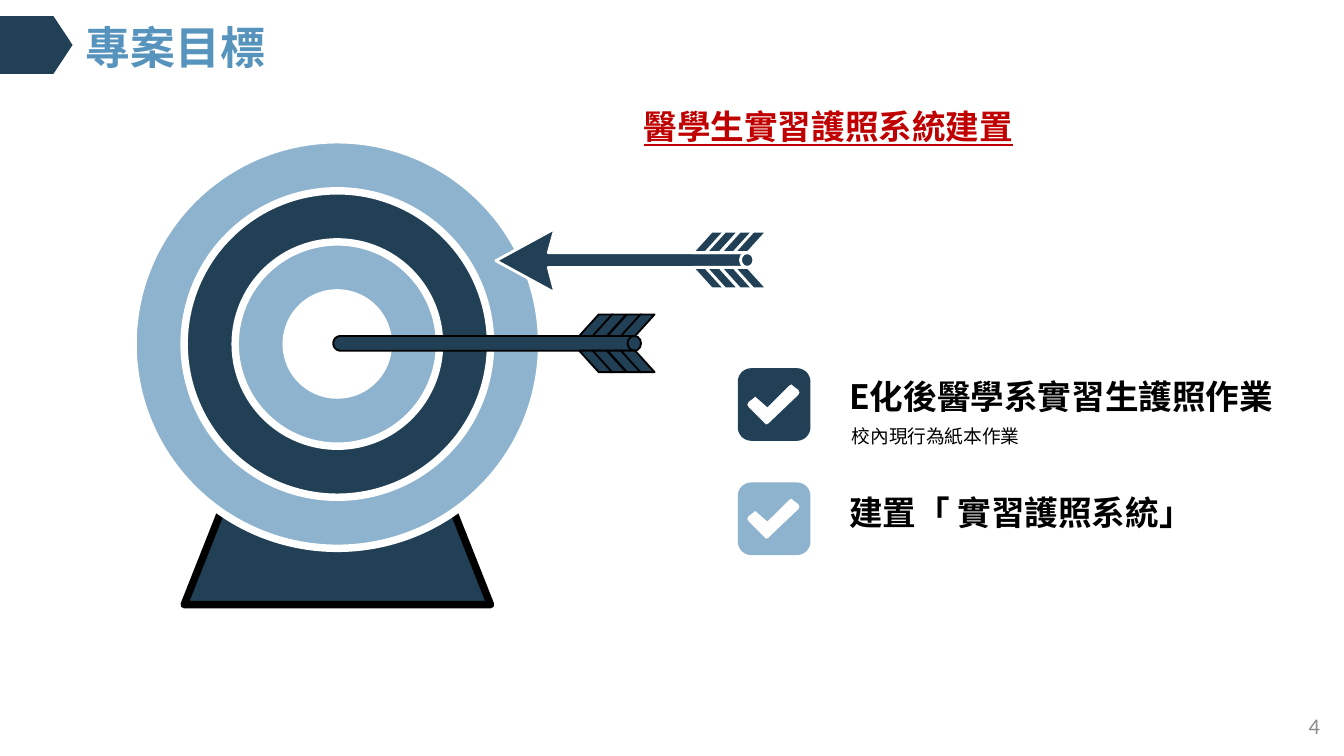
from math import cos, radians, sin

from lxml.etree import SubElement
from pptx import Presentation
from pptx.dml.color import RGBColor
from pptx.enum.shapes import MSO_SHAPE
from pptx.enum.text import MSO_ANCHOR, PP_ALIGN
from pptx.oxml.ns import qn
from pptx.util import Pt

PX = 9144  # EMU in one px, 100 px to the inch
CJK = "Noto Sans CJK SC"
COLORS = {
    "navy": "214055", "sky": "8EB3CE", "title": "5693BD", "red": "C00000",
    "black": "000000", "white": "FFFFFF", "gray": "8C8C8C",
}


def paint(shape, fill, line=None, width=1):
    shape.shadow.inherit = False
    shape.fill.solid()
    shape.fill.fore_color.rgb = RGBColor.from_string(COLORS[fill])
    if line:
        shape.line.color.rgb = RGBColor.from_string(COLORS[line])
        shape.line.width = Pt(width)
    else:
        shape.line.fill.background()
    return shape


def arc(x, y, radius, start):
    """Points of a clockwise quarter circle around (x, y)."""
    angles = [radians(start + step) for step in range(0, 91, 10)]
    return [(x + radius * cos(a), y + radius * sin(a)) for a in angles]


deck = Presentation()
deck.slide_width = 1000 * PX
deck.slide_height = deck.slide_width * 9 // 16
page = deck.slides.add_slide(deck.slide_layouts[6])

# Title marker
marker = page.shapes.add_shape(MSO_SHAPE.PENTAGON, 0, 12 * PX, 54 * PX, 43 * PX)
marker.adjustments[0] = 0.33
paint(marker, "navy")

# Target: stand and rings
target = page.shapes.add_group_shape()
stand = target.shapes.add_shape(
    MSO_SHAPE.TRAPEZOID, 137 * PX, 356 * PX, 228 * PX, 94 * PX)
stand.adjustments[0] = 0.396
paint(stand, "navy", "black", 4)
for index, color in enumerate(["sky", "navy", "sky", "white"]):
    size = 304 - 76 * index
    ring = target.shapes.add_shape(
        MSO_SHAPE.OVAL, (99 + 38 * index) * PX, (104 + 38 * index) * PX,
        size * PX, size * PX)
    paint(ring, color, "white", 4)

# Arrows: outline of the shaft, then nock and feathers
flying = page.shapes.add_group_shape()
stuck_shaft = [(472, 250), (472, 261)] + arc(253.5, 255.5, 5.5, 90) + arc(253.5, 255.5, 5.5, 180)
flying_shaft = [(413, 170), (408, 188), (556, 188), (556, 199),
                (408, 199), (413, 218), (369, 194)]
arrows = [
    (target, stuck_shaft, 431, 234, "black", 1),
    (flying, flying_shaft, 515, 172, "white", 1.5),
]
for group, outline, left, top, line, width in arrows:
    points = [(x * PX, y * PX) for x, y in outline]
    builder = group.shapes.build_freeform(*points[0])
    builder.add_line_segments(points[1:])
    paint(builder.convert_to_shape(), "navy", line, width)
    nock = group.shapes.add_shape(
        MSO_SHAPE.OVAL, (left + 36) * PX, (top + 16) * PX, 10 * PX, 11 * PX)
    paint(nock, "navy", line, width)
    for side in range(2):
        for index in range(4):
            feather = group.shapes.add_shape(
                MSO_SHAPE.PARALLELOGRAM, (left + round(index * 31 / 3)) * PX,
                (top + 27 * side) * PX, 25 * PX, 16 * PX)
            feather.adjustments[0] = 0.904
            paint(feather, "navy", line, width)
            if side:
                feather._element.spPr.xfrm.set("flipV", "1")

# Check boxes with the tick cut out
checklist = page.shapes.add_group_shape()
square = arc(44, 44, 10, 0) + arc(10, 44, 10, 90) + arc(10, 10, 10, 180) + arc(44, 10, 10, 270)
tick = [(45, 20), (46, 18), (45, 16), (41, 13), (40, 12), (38, 13), (22, 29), (14, 22),
        (13, 21), (12, 22), (8, 25), (7, 27), (8, 29), (20, 41), (21, 42), (23, 41)]
for top, color in [(274, "navy"), (359, "sky")]:
    builder = None
    for contour in (square, tick):
        points = [((549 + x) * PX, (top + y) * PX) for x, y in contour]
        if builder is None:
            builder = checklist.shapes.build_freeform(*points[0])
        else:
            builder.move_to(*points[0])
        builder.add_line_segments(points[1:])
    paint(builder.convert_to_shape(), color)

# Texts: parent, place, words, size, font, colour, bold, underline, spacing, anchor, alignment
TOP, MIDDLE = MSO_ANCHOR.TOP, MSO_ANCHOR.MIDDLE
LEFT, RIGHT = PP_ALIGN.LEFT, PP_ALIGN.RIGHT
texts = [
    (checklist, (624, 308, 323, 29), "校內現行為紙本作業", 10, CJK, "black", False, False, 1.2, TOP, LEFT),
    (checklist, (622, 269, 352, 43), "E化後醫學系實習生護照作業", 18, CJK, "black", True, False, 1.2, TOP, LEFT),
    (checklist, (622, 355, 304, 43), "建置「 實習護照系統」", 18, CJK, "black", True, False, 1.2, TOP, LEFT),
    (page, (54, 7, 797, 61), "專案目標", 24, CJK, "title", True, False, 0.9, MIDDLE, LEFT),
    (page, (767, 525, 225, 30), "4", 12, "Calibri", "gray", False, False, 1.0, MIDDLE, RIGHT),
    (page, (469, 74, 485, 40), "醫學生實習護照系統建置", 18, CJK, "red", True, True, 1.0, TOP, LEFT),
]
for parent, place, words, size, font, color, bold, underline, spacing, anchor, align in texts:
    box = parent.shapes.add_textbox(*[length * PX for length in place])
    frame = box.text_frame
    frame.word_wrap = True
    frame.vertical_anchor = anchor
    para = frame.paragraphs[0]
    para.alignment = align
    para.line_spacing = spacing
    span = para.add_run()
    span.text = words
    span.font.size = Pt(size)
    span.font.bold = bold
    span.font.underline = underline
    span.font.color.rgb = RGBColor.from_string(COLORS[color])
    span.font.name = font
    SubElement(span._r.get_or_add_rPr(), qn("a:ea")).set("typeface", font)

deck.save("out.pptx")
